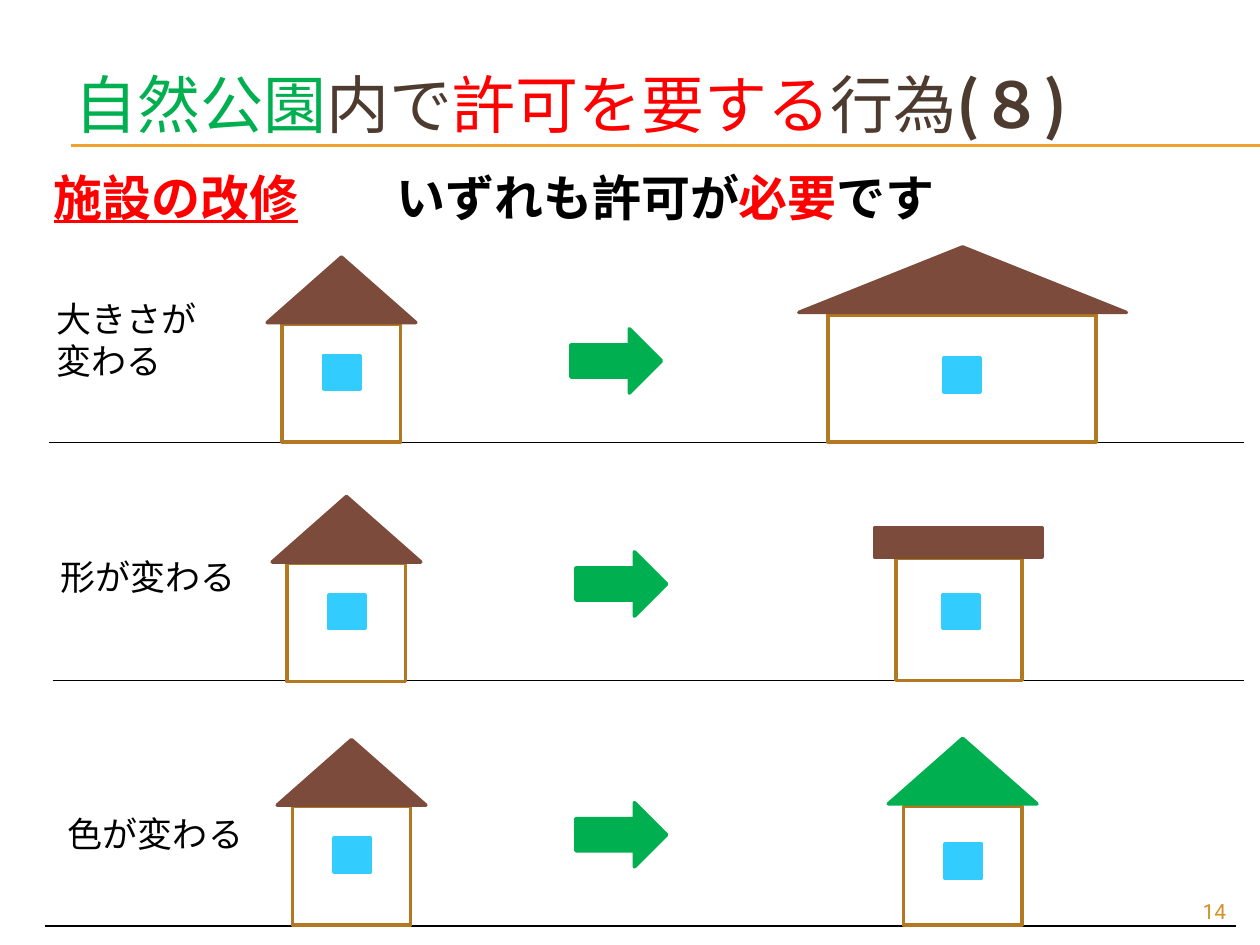
import pptx
import pptx.util
import pptx.oxml.ns
import lxml.etree
from pptx.dml.color import RGBColor
from pptx.enum.shapes import MSO_CONNECTOR, MSO_SHAPE
from pptx.enum.text import MSO_ANCHOR, MSO_AUTO_SIZE, PP_ALIGN
from pptx.util import Inches

COLORS = {
    "green": "00B050", "red": "FF0000", "brown": "4E3B30", "black": "000000",
    "white": "FFFFFF", "gold": "F0A22E", "wall": "B27822", "roof": "7C4B3B",
    "window": "33CCFF", "number": "D48F29",
}
FONT = "Roboto"
CJK_FONT = "Noto Sans CJK JP"


def color(name):
    """Return the named palette colour."""
    return RGBColor.from_string(COLORS[name])


def set_all(target, values):
    """Set every attribute in a dict of format values."""
    for name, value in values.items():
        setattr(target, name, value)


def write_runs(para, spans, size):
    """Write (text, colour, format values) spans into a paragraph."""
    for text, shade, extra in spans:
        span = para.add_run()
        span.text = text
        span.font.color.rgb = color(shade)
        set_all(span.font, {"size": pptx.util.Pt(size), "name": FONT, **extra})
        east = lxml.etree.SubElement(span.font._element, pptx.oxml.ns.qn("a:ea"))
        east.set("typeface", span.font.name)


def add_text(page, place, lines, size, align=PP_ALIGN.LEFT, grow=False):
    """Add a text box with one paragraph for each list of spans."""
    box = page.shapes.add_textbox(*map(Inches, place))
    fit = MSO_AUTO_SIZE.SHAPE_TO_FIT_TEXT if grow else MSO_AUTO_SIZE.NONE
    set_all(box.text_frame, {"word_wrap": True, "auto_size": fit})
    for index, spans in enumerate(lines):
        para = box.text_frame.add_paragraph() if index else box.text_frame.paragraphs[0]
        para.alignment = align
        write_runs(para, spans, size)


def add_title(page):
    """Place the title and colour its parts."""
    title = page.shapes.title
    set_all(title, dict(zip(("left", "top", "width", "height"),
                            map(Inches, (0.49, 0.36, 9.5, 0.92)))))
    set_all(title.text_frame, {"word_wrap": True, "auto_size": MSO_AUTO_SIZE.NONE,
                               "vertical_anchor": MSO_ANCHOR.MIDDLE})
    para = title.text_frame.paragraphs[0]
    para.alignment = PP_ALIGN.LEFT
    write_runs(para, [
        ("自然公園", "green", {}), ("内で", "brown", {}),
        ("許可を要する", "red", {}), ("行為", "brown", {}),
        ("(８)", "brown", {"name": CJK_FONT, "bold": True}),
    ], 36)


def add_rule(page, left, right, top, shade, width):
    """Draw a horizontal line without a shadow."""
    rule = page.shapes.add_connector(MSO_CONNECTOR.STRAIGHT, Inches(left), Inches(top),
                                     Inches(right), Inches(top))
    rule.line.color.rgb = color(shade)
    rule.line.width = pptx.util.Pt(width)
    lxml.etree.SubElement(rule._element.spPr, pptx.oxml.ns.qn("a:effectLst"))


def add_part(shapes, kind, place, fill, line=None):
    """Add a filled preset shape, outlined in its own colour by default."""
    part = shapes.add_shape(kind, *map(Inches, place))
    part.shadow.inherit = False
    part.fill.solid()
    part.fill.fore_color.rgb = color(fill)
    part.line.color.rgb = color(line or fill)
    part.line.width = pptx.util.Pt(2)


def add_house(shapes, wall, roof, window, roof_kind=MSO_SHAPE.ISOSCELES_TRIANGLE,
              roof_color="roof"):
    """Build a house from a wall, a roof and the corner of its window."""
    add_part(shapes, MSO_SHAPE.RECTANGLE, wall, "white", "wall")
    add_part(shapes, roof_kind, roof, roof_color)
    add_part(shapes, MSO_SHAPE.RECTANGLE, (*window, 0.29, 0.27), "window")


def add_old_house(page, left, top):
    """Add the grouped house as it stands before the change."""
    group = page.shapes.add_group_shape()
    add_house(group.shapes, (left, top, 0.94, 0.94),
              (left - 0.12, top - 0.53, 1.18, 0.52), (left + 0.33, top + 0.25))


def main():
    """Build the slide and save it."""
    deck = pptx.Presentation()
    deck.slide_width, deck.slide_height = Inches(10), Inches(7.5)
    page = deck.slides.add_slide(deck.slide_layouts[5])

    for top in (1.15, 1.16):
        add_rule(page, 0.56, 10, top, "gold", 0.75)
    add_title(page)
    bold = {"bold": True}
    add_text(page, (0.33, 1.28, 9.5, 6.01), [[
        ("施設の改修", "red", {"bold": True, "underline": True}),
        ("\u3000\u3000", "red", bold), ("いずれも許可が", "black", bold),
        ("必要", "red", bold), ("です", "black", bold),
    ]], 28)

    for left, right, top in ((0.39, 9.87, 3.51), (0.42, 9.87, 5.4), (0.36, 9.81, 7.35)):
        add_rule(page, left, right, top, "black", 0.79)

    labels = (
        ((0.35, 2.31, 1.9, 0.77), ("大きさが", "変わる")),
        ((0.38, 4.36, 1.62, 0.44), ("形が変わる",)),
        ((0.44, 6.4, 1.7, 0.44), ("色が変わる",)),
    )
    for place, lines in labels:
        add_text(page, place, [[(line, "black", {})] for line in lines], 20, grow=True)

    for left, top in ((2.24, 2.57), (2.28, 4.47), (2.32, 6.4)):
        add_old_house(page, left, top)
    for left, top in ((4.53, 2.61), (4.57, 4.38), (4.57, 6.37)):
        add_part(page.shapes, MSO_SHAPE.RIGHT_ARROW, (left, top, 0.72, 0.51), "green")

    add_house(page.shapes, (6.57, 2.5, 2.13, 1.01), (6.34, 1.96, 2.6, 0.52), (7.49, 2.84))
    add_house(page.shapes, (7.11, 4.43, 1, 0.97), (6.94, 4.19, 1.33, 0.23), (7.48, 4.72),
              roof_kind=MSO_SHAPE.RECTANGLE)
    add_house(page.shapes, (7.17, 6.4, 0.94, 0.94), (7.05, 5.86, 1.18, 0.52), (7.5, 6.7),
              roof_color="green")

    add_text(page, (9, 7.08, 0.83, 0.27), [[("14", "number", {})]], 12, PP_ALIGN.RIGHT)
    deck.save("out.pptx")


if __name__ == "__main__":
    main()
